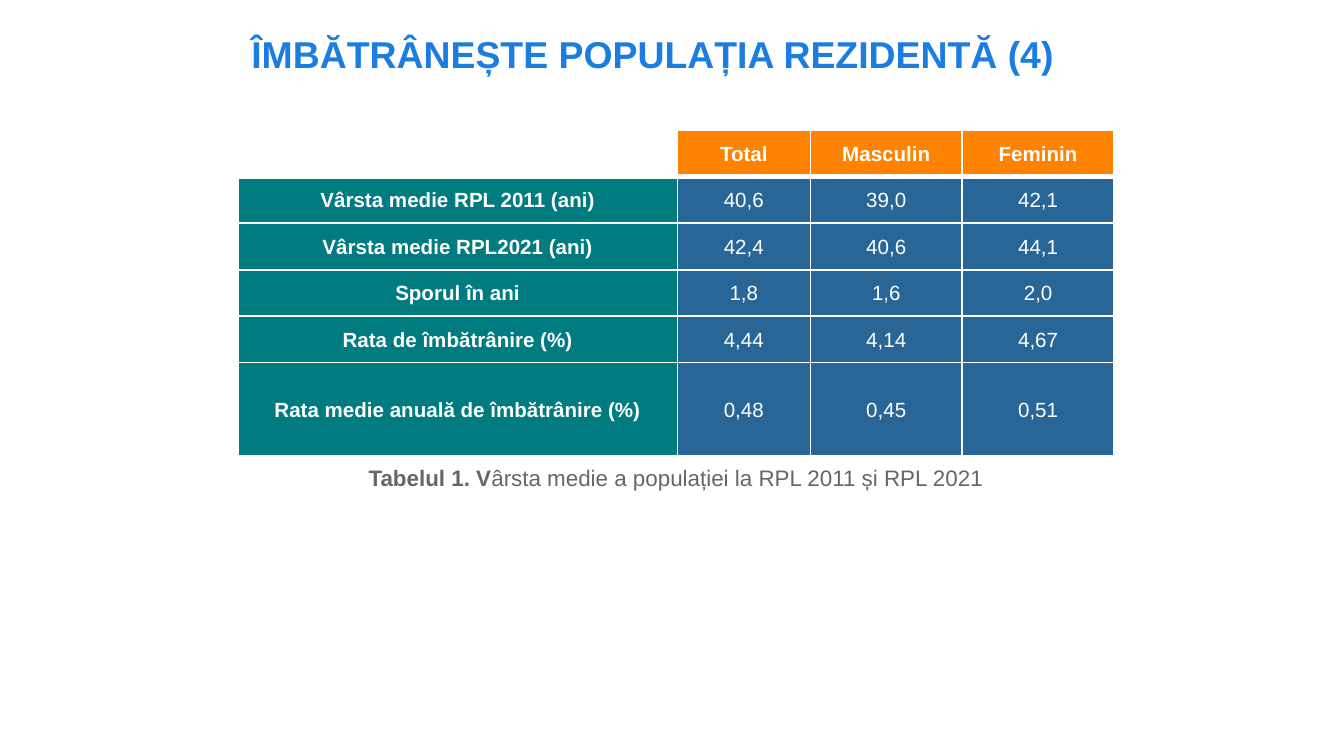
from dataclasses import dataclass

from lxml import etree
from pptx import Presentation
from pptx import util as u
from pptx.dml.color import RGBColor
from pptx.enum import shapes, text
from pptx.oxml.ns import qn

WIDE = 10
HIGH = WIDE * 9 / 16
LEFT, TOP = 1.77, 0.97
COLS = (3.27, 0.99, 1.13, 1.13)
SPANS = (1, 1, 1, 1, 1, 2)
TALL = 2.42
UNIT = TALL / sum(SPANS)
WHITE, ORANGE, TEAL, BLUE = "FFFFFF", "FF8200", "007C80", "276696"
GRAY, SKY = "666666", "1C7DE1"
ROWS = (
    ("", "Total", "Masculin", "Feminin"),
    ("Vârsta medie RPL 2011 (ani)", "40,6", "39,0", "42,1"),
    ("Vârsta medie RPL2021 (ani)", "42,4", "40,6", "44,1"),
    ("Sporul în ani", "1,8", "1,6", "2,0"),
    ("Rata de îmbătrânire (%)", "4,44", "4,14", "4,67"),
    ("Rata medie anuală de îmbătrânire (%)", "0,48", "0,45", "0,51"),
)


@dataclass
class Run:
    """A stretch of text in one style."""
    words: str
    size: float
    color: str
    bold: bool = False


def tint(code: str) -> RGBColor:
    """Turn a hex string into a colour."""
    return RGBColor.from_string(code)


def write(frame, runs: list[Run], align, space: float = 1.0):
    """Fill the first paragraph of a frame run by run."""
    para = frame.paragraphs[0]
    para.alignment, para.line_spacing = align, space
    for item in runs:
        run = para.add_run()
        run.text = item.words
        font = run.font
        font.name, font.size, font.bold = "Arial", u.Pt(item.size), item.bold
        font.color.rgb = tint(item.color)
    return para


def edge(cell, side: str, width: float) -> None:
    """Draw one white side of a cell."""
    line = etree.SubElement(cell._tc.get_or_add_tcPr(), qn(f"a:ln{side}"), w=str(u.Pt(width)))
    fill = etree.SubElement(line, qn("a:solidFill"))
    etree.SubElement(fill, qn("a:srgbClr"), val=WHITE)


def paint(cell, row: int, col: int) -> None:
    """Style and fill one table cell by its place in the grid."""
    thick = {"T": 3 if row == 1 else 1, "B": 3 if row == 0 else 1}
    for side in "LRTB":
        edge(cell, side, thick.get(side, 1))
    cell.margin_left = cell.margin_right = u.Inches(0.07)
    cell.margin_top = cell.margin_bottom = 0
    cell.vertical_anchor = text.MSO_ANCHOR.MIDDLE
    words = ROWS[row][col]
    if not words:
        cell.fill.background()
        return
    cell.fill.solid()
    cell.fill.fore_color.rgb = tint(ORANGE if row == 0 else TEAL if col == 0 else BLUE)
    bold = row == 0 or col == 0
    write(cell.text_frame, [Run(words, 11, WHITE, bold)], text.PP_ALIGN.CENTER, 1.07)


def grid(slide) -> None:
    """Add the table of mean ages."""
    size = u.Inches(sum(COLS)), u.Inches(TALL)
    table = slide.shapes.add_table(len(ROWS), len(COLS), u.Inches(LEFT), u.Inches(TOP), *size).table
    for col, wide in zip(table.columns, COLS):
        col.width = u.Inches(wide)
    for row, span in zip(table.rows, SPANS):
        row.height = u.Inches(UNIT * span)
    for row in range(len(ROWS)):
        for col in range(len(COLS)):
            paint(table.cell(row, col), row, col)


def label(slide) -> None:
    """Add the caption right below the table."""
    box = slide.shapes.add_shape(shapes.MSO_SHAPE.RECTANGLE, u.Inches(LEFT), u.Inches(TOP + TALL),
                                 u.Inches(sum(COLS)), u.Inches(0.3))
    box.shadow.inherit = False
    box.fill.solid()
    box.fill.fore_color.rgb = tint(WHITE)
    box.line.fill.background()
    frame = box.text_frame
    frame.word_wrap = True
    frame.auto_size = text.MSO_AUTO_SIZE.SHAPE_TO_FIT_TEXT
    frame.vertical_anchor = text.MSO_ANCHOR.TOP
    runs = [Run("Tabelul 1. V", 12, GRAY, True),
            Run("ârsta medie a populației la RPL 2011 și RPL 2021", 12, GRAY)]
    write(frame, runs, text.PP_ALIGN.CENTER, 1.07).space_after = u.Pt(8)


def head(slide) -> None:
    """Place and format the title."""
    title = slide.shapes.title
    title.left, title.top = u.Inches(LEFT), 0
    title.width, title.height = u.Inches(WIDE - LEFT), u.Inches(0.8)
    frame = title.text_frame
    frame.auto_size = text.MSO_AUTO_SIZE.NONE
    frame.vertical_anchor = text.MSO_ANCHOR.MIDDLE
    write(frame, [Run("ÎMBĂTRÂNEȘTE POPULAȚIA REZIDENTĂ (4)", 20, SKY, True)], text.PP_ALIGN.LEFT)


def main() -> None:
    """Build the slide and save it."""
    deck = Presentation()
    deck.slide_width, deck.slide_height = u.Inches(WIDE), u.Inches(HIGH)
    slide = deck.slides.add_slide(deck.slide_layouts[5])
    grid(slide)
    label(slide)
    head(slide)
    deck.save("out.pptx")


if __name__ == "__main__":
    main()
